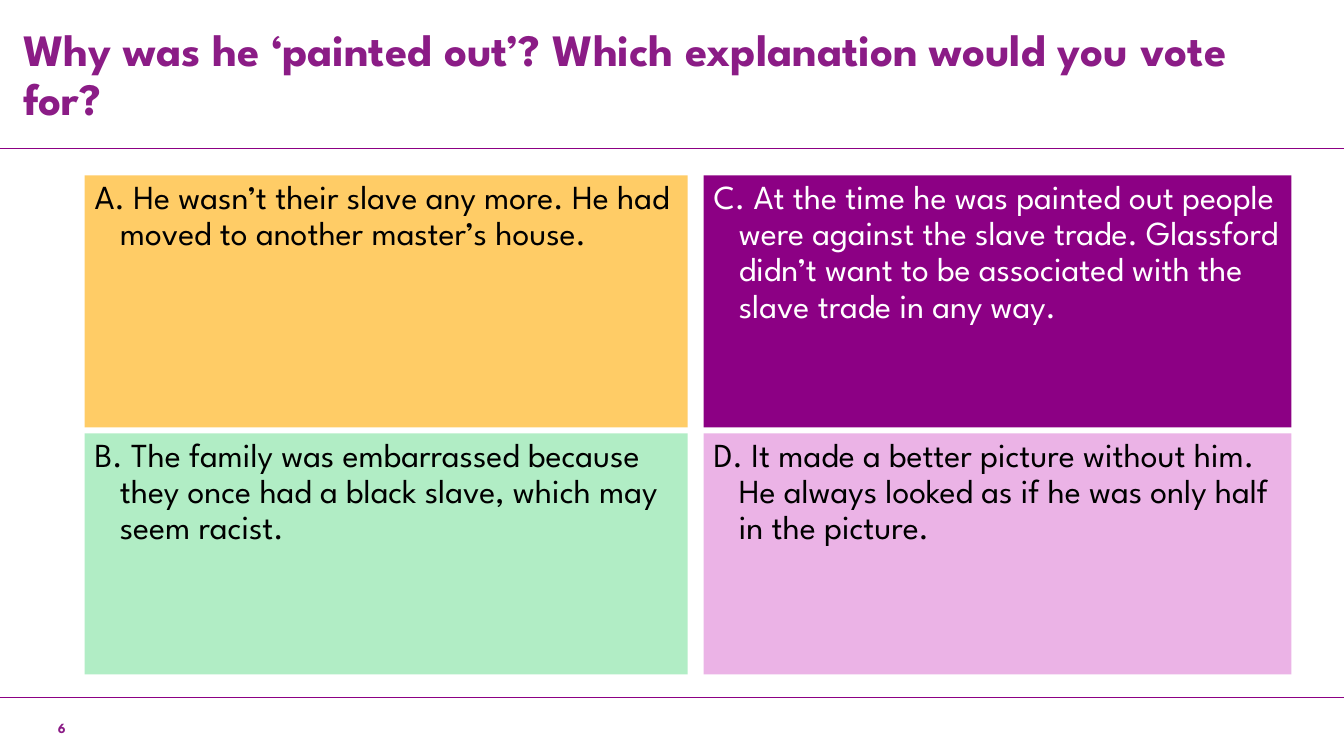
from dataclasses import dataclass

from lxml import etree
from pptx import Presentation
from pptx.dml.color import RGBColor
from pptx.enum.shapes import MSO_CONNECTOR, MSO_SHAPE
from pptx.enum.text import MSO_ANCHOR, PP_ALIGN
from pptx.oxml.ns import qn
from pptx.util import Inches, Pt

RECT = MSO_SHAPE.RECTANGLE
STRAIGHT = MSO_CONNECTOR.STRAIGHT
TOP, MIDDLE = MSO_ANCHOR.TOP, MSO_ANCHOR.MIDDLE
LEFT, RIGHT = PP_ALIGN.LEFT, PP_ALIGN.RIGHT


@dataclass(frozen=True)
class Theme:
    font: str = "League Spartan"
    heading: str = "8B1C86"
    purple: str = "8C0084"
    amber: str = "FFCC66"
    mint: str = "B1EDC5"
    pink: str = "EBB3E6"
    black: str = "000000"
    white: str = "FFFFFF"
    title_size: int = 32
    body_size: int = 24
    number_size: int = 10
    rule_width: float = 0.5
    line_spacing: float = 0.9
    indent: float = 0.25


@dataclass(frozen=True)
class Span:
    start: float
    size: float


@dataclass(frozen=True)
class Option:
    col: int
    row: int
    text: str
    fill: str
    color: str


THEME = Theme()
WIDTH, HEIGHT = 13.33, 7.5
COLS = (Span(0.84, 5.98), Span(6.98, 5.83))
ROWS = (Span(1.74, 2.5), Span(4.3, 2.39))
RULES = (6.92, 1.47)
OPTIONS = (
    Option(0, 0, "A. He wasn’t their slave any more. He had moved to another "
           "master’s house.", THEME.amber, THEME.black),
    Option(1, 0, "C. At the time he was painted out people were against the "
           "slave trade. Glassford didn’t want to be associated with the "
           "slave trade in any way.", THEME.purple, THEME.white),
    Option(0, 1, "B. The family was embarrassed because they once had a black "
           "slave, which may seem racist.", THEME.mint, THEME.black),
    Option(1, 1, "D. It made a better picture without him. He always looked "
           "as if he was only half in the picture.", THEME.pink, THEME.black),
)


def write(sp, text: str, size: int, color: str, bold: bool = False,
          align=LEFT, anchor=TOP, spacing: float = 1.0,
          hanging: float = 0) -> None:
    tf = sp.text_frame
    tf.word_wrap = True
    tf.vertical_anchor = anchor
    p = tf.paragraphs[0]
    p.alignment = align
    p.line_spacing = spacing
    if hanging:
        pPr = p._p.get_or_add_pPr()
        pPr.set("marL", str(Inches(hanging)))
        pPr.set("indent", str(-Inches(hanging)))
    r = p.add_run()
    r.text = text
    r.font.name = THEME.font
    r.font.size = Pt(size)
    r.font.bold = bold
    r.font.color.rgb = RGBColor.from_string(color)


def add_box(s, x: Span, y: Span):
    return s.shapes.add_textbox(Inches(x.start), Inches(y.start),
                                Inches(x.size), Inches(y.size))


def add_rule(s, y: float) -> None:
    rule = s.shapes.add_connector(STRAIGHT, 0, Inches(y), Inches(WIDTH), Inches(y))
    rule.line.color.rgb = RGBColor.from_string(THEME.purple)
    rule.line.width = Pt(THEME.rule_width)
    etree.SubElement(rule._element.spPr, qn("a:effectLst"))


def add_option(s, option: Option) -> None:
    x, y = COLS[option.col], ROWS[option.row]
    sp = s.shapes.add_shape(RECT, Inches(x.start), Inches(y.start),
                            Inches(x.size), Inches(y.size))
    sp.shadow.inherit = False
    sp.fill.solid()
    sp.fill.fore_color.rgb = RGBColor.from_string(option.fill)
    sp.line.fill.background()
    write(sp, option.text, THEME.body_size, option.color,
          spacing=THEME.line_spacing, hanging=THEME.indent)


def main() -> None:
    prs = Presentation()
    prs.slide_width, prs.slide_height = Inches(WIDTH), Inches(HEIGHT)
    s = prs.slides.add_slide(prs.slide_layouts[6])
    number = add_box(s, Span(-0.25, 1), Span(7.09, 0.27))
    write(number, "6", THEME.number_size, THEME.heading, bold=True, align=RIGHT)
    for y in RULES:
        add_rule(s, y)
    title = add_box(s, Span(0.13, 12.95), Span(0.43, 0.66))
    write(title, "Why was he ‘painted out’? Which explanation would you vote for?",
          THEME.title_size, THEME.heading, bold=True, anchor=MIDDLE,
          spacing=THEME.line_spacing)
    for option in OPTIONS:
        add_option(s, option)
    prs.save("out.pptx")


if __name__ == "__main__":
    main()
